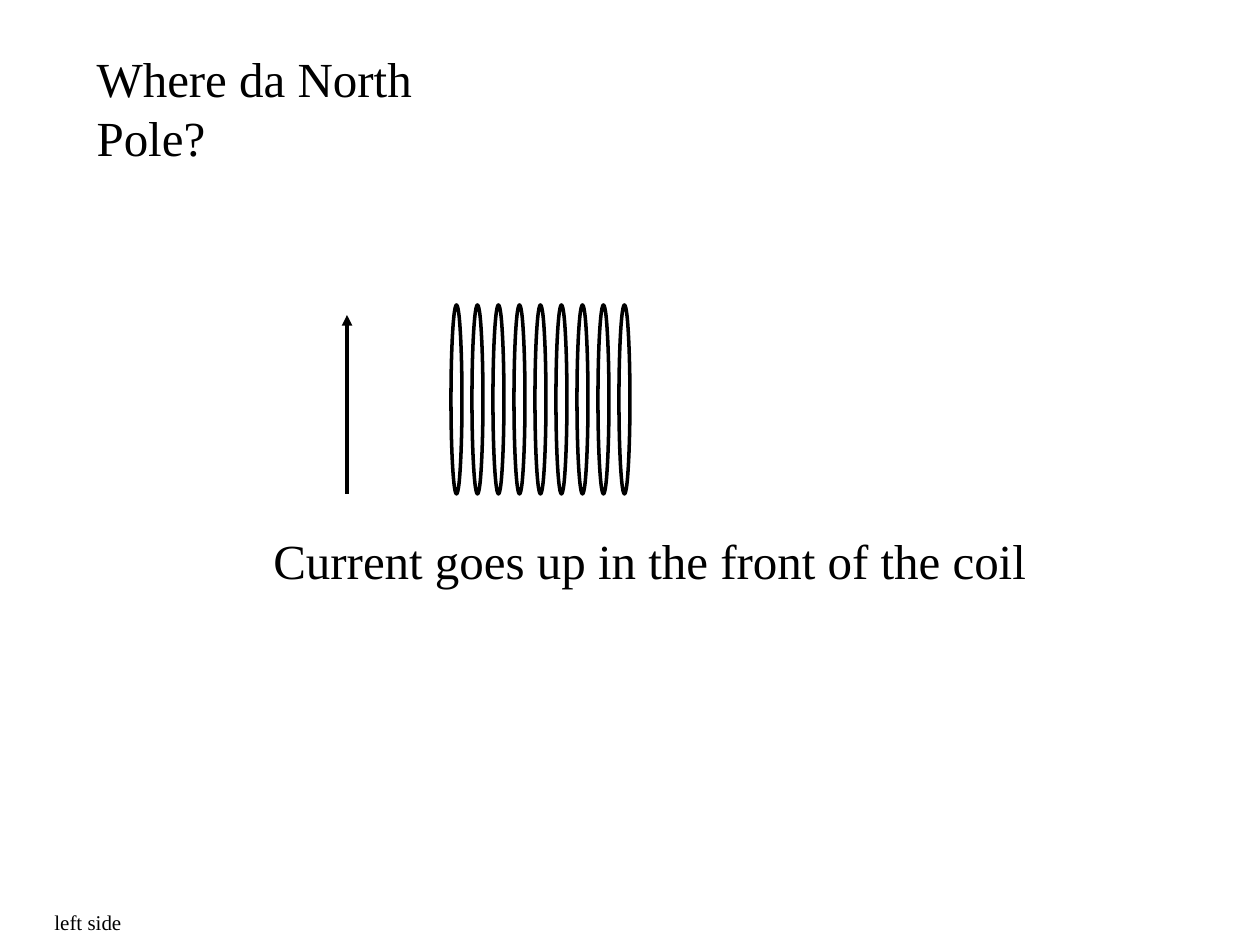
from lxml import etree
from pptx import Presentation
from pptx import util as u
from pptx.dml.color import RGBColor
from pptx.enum import shapes, text
from pptx.oxml.ns import qn

PX = u.Inches(1) / 126
BLACK = RGBColor(0, 0, 0)
FONT = "Times New Roman"

# Content: text, box in px, size in points
TITLE = ("Where da North Pole?", (84, 42, 461, 72), 28)
LABELS = [
    ("left side", (42, 903, 93, 38), 12),
    ("Current goes up in the front of the coil", (261, 524, 779, 72), 28),
]
COIL = {"left": 451, "top": 305, "width": 11, "height": 189, "pitch": 21, "turns": 9}
CURRENT = (347, 494, 347, 315)


def px(*lengths):
    return [round(n * PX) for n in lengths]


def write(sp, words, box, size):
    sp.left, sp.top, sp.width, sp.height = px(*box)
    tf = sp.text_frame
    tf.text = words
    frame = {"word_wrap": False, "auto_size": text.MSO_AUTO_SIZE.NONE,
             "vertical_anchor": text.MSO_ANCHOR.TOP}
    for name, value in frame.items():
        setattr(tf, name, value)
    p = tf.paragraphs[0]
    p.alignment = text.PP_ALIGN.LEFT
    r = p.runs[0]
    r.font.name, r.font.size = FONT, u.Pt(size)
    r.font.color.rgb = BLACK


def outline(sp):
    sp.line.color.rgb = BLACK
    sp.line.width = u.Pt(2)


prs = Presentation()
prs.slide_width, prs.slide_height = u.Inches(10), u.Inches(7.5)
s = prs.slides.add_slide(prs.slide_layouts[5])

# Title and labels
write(s.shapes.title, *TITLE)
for label in LABELS:
    write(s.shapes.add_textbox(0, 0, 0, 0), *label)

# Coil turns
for i in range(COIL["turns"]):
    left = COIL["left"] + i * COIL["pitch"]
    turn = s.shapes.add_shape(
        shapes.MSO_SHAPE.OVAL,
        *px(left, COIL["top"], COIL["width"], COIL["height"]))
    turn.shadow.inherit = False
    turn.fill.background()
    outline(turn)

# Current arrow
arrow = s.shapes.add_connector(shapes.MSO_CONNECTOR.STRAIGHT, *px(*CURRENT))
outline(arrow)
etree.SubElement(arrow.line._get_or_add_ln(), qn("a:tailEnd"), type="triangle")
etree.SubElement(arrow._element.spPr, qn("a:effectLst"))

prs.save("out.pptx")
